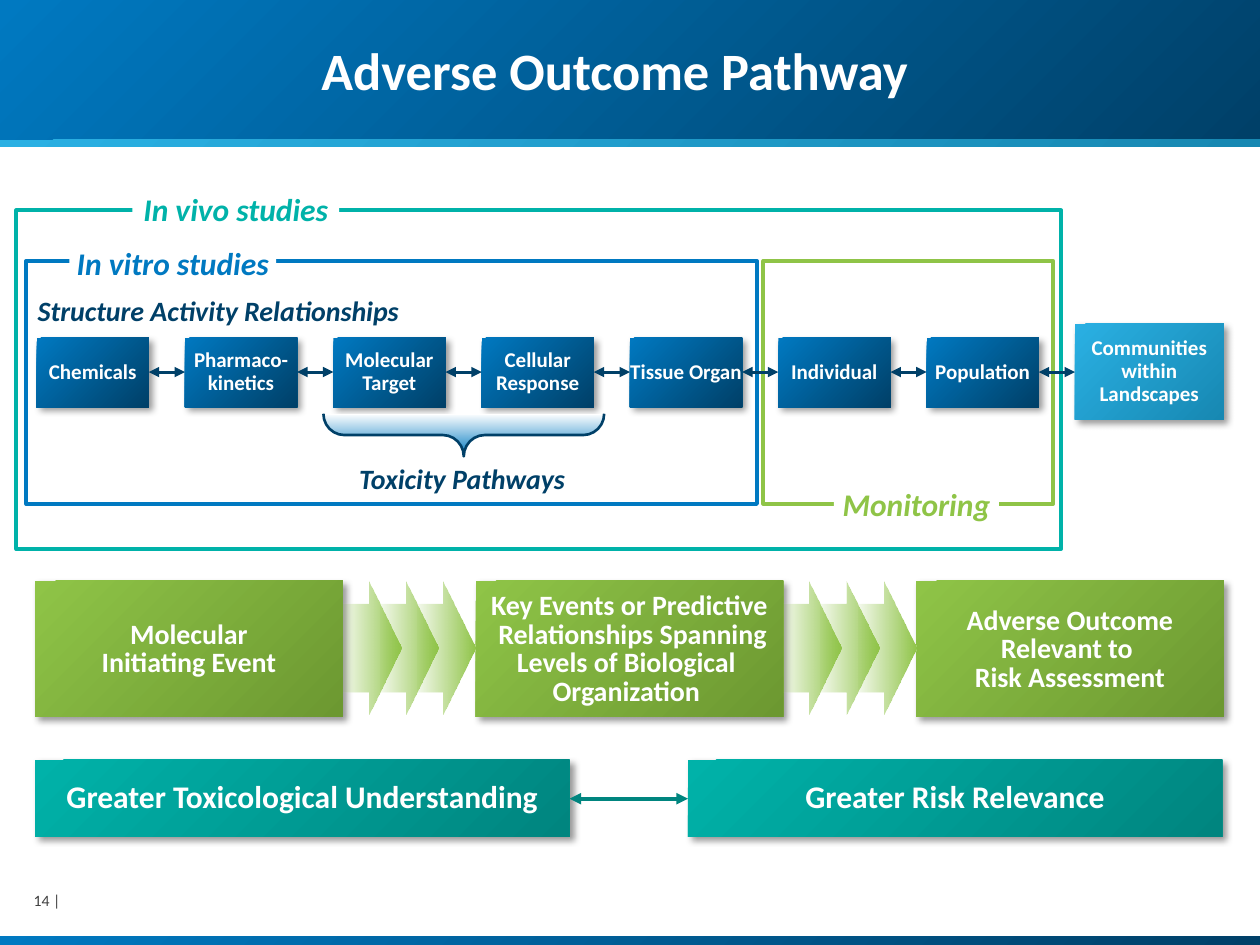
from dataclasses import dataclass
from typing import Optional

from lxml import etree
from pptx import Presentation
from pptx import util as u
from pptx.dml.color import RGBColor
from pptx.enum import shapes, text
from pptx.oxml import ns

MID, TOP, LOW = (text.MSO_ANCHOR.MIDDLE, text.MSO_ANCHOR.TOP,
                 text.MSO_ANCHOR.BOTTOM)
LEFT, CENTER, RIGHT = (text.PP_ALIGN.LEFT, text.PP_ALIGN.CENTER,
                       text.PP_ALIGN.RIGHT)
KIND = shapes.MSO_SHAPE


@dataclass(frozen=True)
class Theme:
    font: str = "Calibri"
    white: str = "FFFFFF"
    gray: str = "404040"
    blue: str = "0079C1"
    navy: str = "004068"
    sky: str = "2AB0E3"
    lake: str = "1788B2"
    green: str = "8FC447"
    moss: str = "6C9831"
    teal: str = "00B2A9"
    pine: str = "00857F"
    title: int = 30
    head: int = 18
    body: int = 16
    step: int = 12
    note: int = 9


T = Theme()


@dataclass(frozen=True)
class Box:
    """A place on the slide, in centimetres."""
    x: float
    y: float
    w: float
    h: float

    def emu(self) -> tuple:
        return tuple(u.Cm(v) for v in (self.x, self.y, self.w, self.h))


@dataclass(frozen=True)
class Label:
    words: str
    box: Box
    color: str
    size: int = T.head
    align: text.PP_ALIGN = CENTER
    fill: Optional[str] = T.white


def node(parent, tag: str, **attrs):
    return etree.SubElement(parent, ns.qn(tag), attrs)


def write(shape, words: str, size=T.step, color=T.white, bold=True,
          italic=False, align=CENTER, anchor=MID, gap=None,
          inset=(0, 0.13, 0, 0.13)) -> None:
    frame = shape.text_frame
    frame.word_wrap = True
    frame.auto_size = text.MSO_AUTO_SIZE.NONE
    frame.vertical_anchor = anchor
    (frame.margin_left, frame.margin_top,
     frame.margin_right, frame.margin_bottom) = (u.Cm(v) for v in inset)
    for i, line in enumerate(words.split("\n")):
        para = frame.add_paragraph() if i else frame.paragraphs[0]
        para.alignment = align
        if gap:
            para.line_spacing = gap
        run = para.add_run()
        run.text = line
        font = run.font
        font.name, font.size = T.font, u.Pt(size)
        font.bold, font.italic = bold, italic
        font.color.rgb = RGBColor.from_string(color)


def draw(slide, box: Box, kind=KIND.RECTANGLE, fill=None, angle=315,
         line=None, width=2.25, shade=False):
    """fill is one colour, a pair for a gradient, or None."""
    shape = slide.shapes.add_shape(kind, *box.emu())
    shape.shadow.inherit = False
    if fill is None:
        shape.fill.background()
    elif isinstance(fill, str):
        shape.fill.solid()
        shape.fill.fore_color.rgb = RGBColor.from_string(fill)
    else:
        shape.fill.gradient()
        shape.fill.gradient_angle = angle
        for stop, color in zip(shape.fill.gradient_stops, fill):
            stop.color.rgb = RGBColor.from_string(color)
    if line:
        shape.line.color.rgb = RGBColor.from_string(line)
        shape.line.width = u.Pt(width)
    else:
        shape.line.fill.background()
    if shade:
        effect = shape._element.spPr.find(ns.qn("a:effectLst"))
        outer = node(effect, "a:outerShdw", blurRad=str(u.Pt(4)),
                     dist=str(u.Pt(3)), dir="2700000", algn="tl",
                     rotWithShape="0")
        node(node(outer, "a:srgbClr", val="000000"), "a:alpha", val="40000")
    return shape


def link(slide, x1: float, x2: float, y: float, color: str,
         width: float) -> None:
    wire = slide.shapes.add_connector(
        shapes.MSO_CONNECTOR.STRAIGHT, u.Cm(x1), u.Cm(y), u.Cm(x2), u.Cm(y))
    wire.line.color.rgb = RGBColor.from_string(color)
    wire.line.width = u.Pt(width)
    for end in ("a:headEnd", "a:tailEnd"):
        node(wire.line._get_or_add_ln(), end, type="triangle")
    node(wire._element.spPr, "a:effectLst")


def chevron(slide, x: float) -> None:
    arrow = draw(slide, Box(x, 11.73, 1.17, 2.67), KIND.RIGHT_ARROW,
                 (T.green, T.green), angle=0)
    arrow.adjustments[0], arrow.adjustments[1] = 0.66, 0.56
    first = next(arrow._element.iter(ns.qn("a:srgbClr")))
    node(first, "a:alpha", val="10000")


def tag(slide, item: Label) -> None:
    shape = draw(slide, item.box, fill=item.fill)
    write(shape, item.words, size=item.size, color=item.color, italic=True,
          align=item.align, anchor=TOP)


STEPS = ("Chemicals", "Pharmaco- kinetics", "Molecular Target",
         "Cellular Response", "Tissue Organ", "Individual", "Population")
EVENTS = ("Molecular\nInitiating Event",
          "Key Events or Predictive\n Relationships Spanning\n"
          "Levels of Biological \nOrganization ",
          "Adverse Outcome\nRelevant to \nRisk Assessment")
GOALS = ("Greater Toxicological Understanding", "Greater Risk Relevance")
LABELS = (
    Label("Toxicity Pathways", Box(6.22, 9.17, 6.2, 0.94), T.navy, T.body,
          fill=None),
    Label("Structure Activity Relationships", Box(0.76, 5.79, 10.77, 0.94),
          T.navy, T.body, LEFT, None),
    Label("In vitro studies", Box(1.4, 4.78, 4.17, 1.02), T.blue),
    Label("In vivo studies", Box(2.67, 3.71, 4.17, 1.02), T.teal),
    Label("Monitoring", Box(16.81, 9.65, 3.33, 1.02), T.green),
)


def main() -> None:
    deck = Presentation()
    deck.slide_width, deck.slide_height = u.Cm(25.4), u.Cm(19.05)
    slide = deck.slides.add_slide(deck.slide_layouts[5])

    # Bands and page number
    for y, h, fill in ((0, 2.87, (T.blue, T.navy)),
                       (2.82, 0.14, (T.sky, T.lake)),
                       (18.87, 0.2, (T.blue, T.navy))):
        draw(slide, Box(0, y, 25.4, h), fill=fill)
    page = slide.shapes.add_textbox(*Box(0.33, 17.98, 0.89, 0.36).emu())
    write(page, "14 |", size=T.note, color=T.gray, bold=False, align=RIGHT,
          anchor=LOW, gap=0.9, inset=(0, 0, 0, 0))

    # Title, raised above the bands
    title = slide.shapes.title
    title.left, title.top, title.width, title.height = Box(
        0.66, -0.25, 23.47, 2.44).emu()
    write(title, "Adverse Outcome Pathway", size=T.title, anchor=LOW,
          gap=0.9, inset=(0.25, 0.13, 0.25, 0.13))
    slide.shapes._spTree.append(title._element)

    # Study frames
    for box, color in ((Box(0.53, 5.26, 14.73, 4.9), T.blue),
                       (Box(0.33, 4.24, 21.06, 6.83), T.teal),
                       (Box(15.39, 5.26, 5.84, 4.9), T.green)):
        draw(slide, box, line=color)

    # Chain of steps, ending in communities
    start, pitch, wide = 0.74, 2.99, 2.26
    for i, words in enumerate(STEPS):
        step = draw(slide, Box(start + i * pitch, 6.81, wide, 1.4),
                    fill=(T.blue, T.navy), shade=True)
        write(step, words, gap=0.9)
    last = draw(slide, Box(start + len(STEPS) * pitch, 6.53, 3, 1.93),
                fill=(T.sky, T.lake), shade=True)
    write(last, "Communities within Landscapes", gap=0.9)
    for i in range(len(STEPS)):
        x = start + i * pitch
        link(slide, x + wide, x + pitch, 7.5, T.navy, 1.75)

    # Brace and labels
    brace = draw(slide, Box(8.92, 5.94, 0.86, 5.66), KIND.LEFT_BRACE,
                 (T.blue, T.white), angle=0, line=T.navy, width=1.5)
    brace.rotation = 270
    brace.adjustments[0], brace.adjustments[1] = 0.49, 0.5
    for item in LABELS:
        tag(slide, item)

    # Events, with three chevrons leading into each later one
    for i, words in enumerate(EVENTS):
        x = 0.71 + i * 8.88
        event = draw(slide, Box(x, 11.71, 6.2, 2.74),
                     fill=(T.green, T.moss), shade=True)
        write(event, words, size=T.body, gap=0.85, inset=(0, 0.13, 0, 0.08))
        if i:
            for n in range(3):
                chevron(slide, x - 1.17 - n * 0.75)

    # Goals
    for x, words in zip((0.71, 13.87), GOALS):
        goal = draw(slide, Box(x, 15.32, 10.77, 1.55),
                    fill=(T.teal, T.pine), shade=True)
        write(goal, words, size=T.head, gap=0.9,
              inset=(0.25, 0.13, 0.25, 0.13))
    link(slide, 11.48, 13.87, 16.1, T.pine, 2.25)

    deck.save("out.pptx")


if __name__ == "__main__":
    main()
